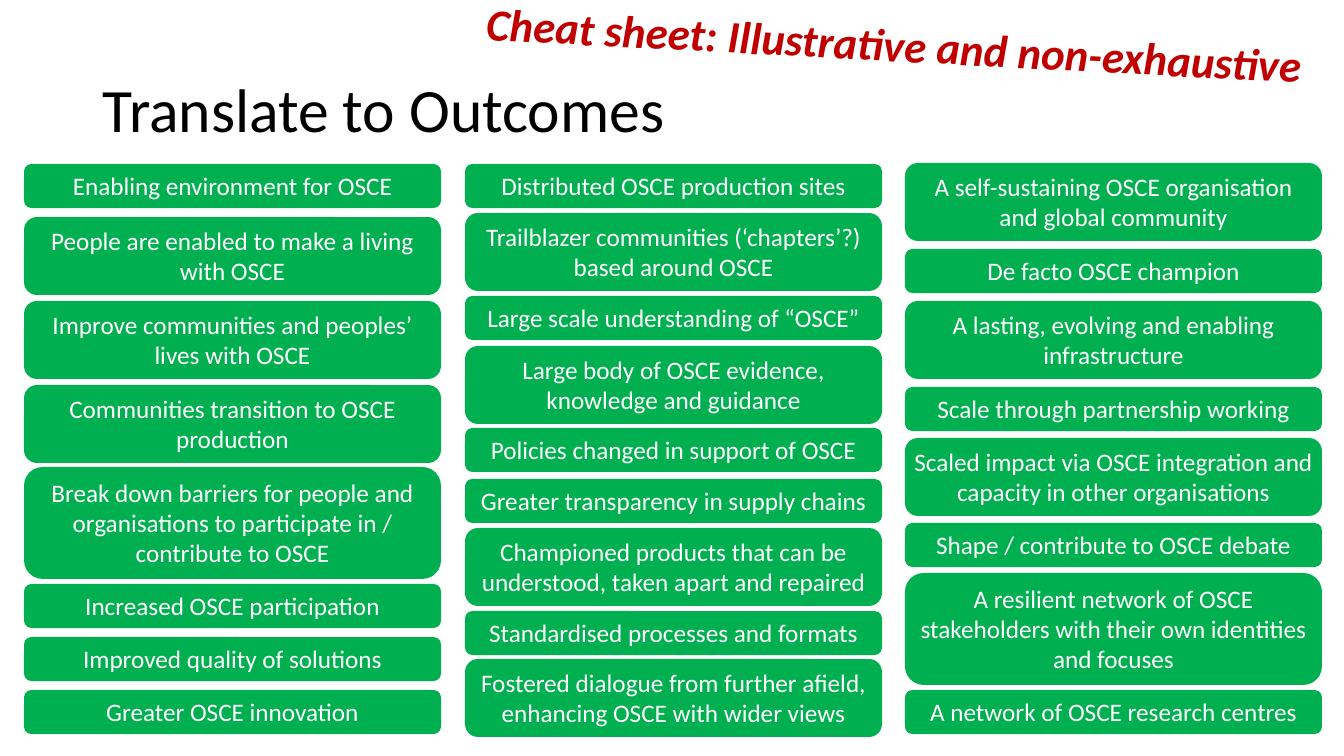
"""Build the 'Translate to Outcomes' slide with three columns of outcome boxes."""
from dataclasses import dataclass

from pptx import Presentation
from pptx import util as u
from pptx.dml import color
from pptx.enum import shapes, text

PX = 9071
FONT = "Calibri"
COLOURS = {"box": "00B050", "box_text": "FFFFFF", "title": "000000", "note": "C00000"}
LEFTS = (24, 465, 905)
BOX_WIDTH = 417
FIRST_LINE, NEXT_LINE = 44, 34


@dataclass
class Outcome:
    top: int
    lines: int
    label: str


COLUMNS = (
    (
        Outcome(164, 1, "Enabling environment for OSCE"),
        Outcome(217, 2, "People are enabled to make a living with OSCE"),
        Outcome(301, 2, "Improve communities and peoples’ lives with OSCE"),
        Outcome(385, 2, "Communities transition to OSCE production"),
        Outcome(467, 3, "Break down barriers for people and organisations "
                        "to participate in / contribute to OSCE"),
        Outcome(584, 1, "Increased OSCE participation"),
        Outcome(637, 1, "Improved quality of solutions"),
        Outcome(690, 1, "Greater OSCE innovation"),
    ),
    (
        Outcome(164, 1, "Distributed OSCE production sites"),
        Outcome(213, 2, "Trailblazer communities (‘chapters’?) based around OSCE"),
        Outcome(296, 1, "Large scale understanding of “OSCE”"),
        Outcome(346, 2, "Large body of OSCE evidence, knowledge and guidance"),
        Outcome(428, 1, "Policies changed in support of OSCE"),
        Outcome(479, 1, "Greater transparency in supply chains"),
        Outcome(528, 2, "Championed products that can be understood, "
                        "taken apart and repaired"),
        Outcome(611, 1, "Standardised processes and formats"),
        Outcome(659, 2, "Fostered dialogue from further afield, "
                        "enhancing OSCE with wider views"),
    ),
    (
        Outcome(163, 2, "A self-sustaining OSCE organisation and global community"),
        Outcome(249, 1, "De facto OSCE champion"),
        Outcome(301, 2, "A lasting, evolving and enabling infrastructure"),
        Outcome(387, 1, "Scale through partnership working"),
        Outcome(438, 2, "Scaled impact via OSCE integration and "
                        "capacity in other organisations"),
        Outcome(523, 1, "Shape / contribute to OSCE debate"),
        Outcome(573, 3, "A resilient network of OSCE stakeholders "
                        "with their own identities and focuses"),
        Outcome(690, 1, "A network of OSCE research centres"),
    ),
)


def px(*lengths: int) -> list[u.Emu]:
    return [u.Emu(n * PX) for n in lengths]


def write(sp, words: str, *, size: int, colour: str, bold: bool = False,
          italic: bool = False, align=text.PP_ALIGN.CENTER,
          anchor=text.MSO_ANCHOR.MIDDLE, spacing: float = 1.0) -> None:
    tf = sp.text_frame
    tf.word_wrap = True
    tf.vertical_anchor = anchor
    p = tf.paragraphs[0]
    p.alignment = align
    p.line_spacing = spacing
    r = p.add_run()
    r.text = words
    r.font.name = FONT
    r.font.size = u.Pt(size)
    r.font.bold = bold
    r.font.italic = italic
    r.font.color.rgb = color.RGBColor.from_string(COLOURS[colour])


def add_outcome(s, left: int, outcome: Outcome) -> None:
    height = FIRST_LINE + NEXT_LINE * (outcome.lines - 1)
    sp = s.shapes.add_shape(shapes.MSO_SHAPE.ROUNDED_RECTANGLE,
                            *px(left, outcome.top, BOX_WIDTH, height))
    sp.shadow.inherit = False
    sp.fill.solid()
    sp.fill.fore_color.rgb = color.RGBColor.from_string(COLOURS["box"])
    sp.line.fill.background()
    tf = sp.text_frame
    tf.margin_left, tf.margin_top, tf.margin_right, tf.margin_bottom = px(4, 4, 4, 5)
    write(sp, outcome.label, size=18, colour="box_text")


def main() -> None:
    prs = Presentation()
    prs.slide_width, prs.slide_height = px(1344, 756)
    s = prs.slides.add_slide(prs.slide_layouts[6])

    title = s.shapes.add_textbox(*px(93, 40, 1159, 146))
    write(title, "Translate to Outcomes", size=44, colour="title",
          align=text.PP_ALIGN.LEFT, spacing=0.9)

    for left, column in zip(LEFTS, COLUMNS):
        for outcome in column:
            add_outcome(s, left, outcome)

    note = s.shapes.add_textbox(*px(448, 12, 889, 119))
    note.rotation = 3
    write(note, "Cheat sheet: Illustrative and non-exhaustive", size=32,
          colour="note", bold=True, italic=True, anchor=text.MSO_ANCHOR.TOP)

    prs.save("out.pptx")


if __name__ == "__main__":
    main()
